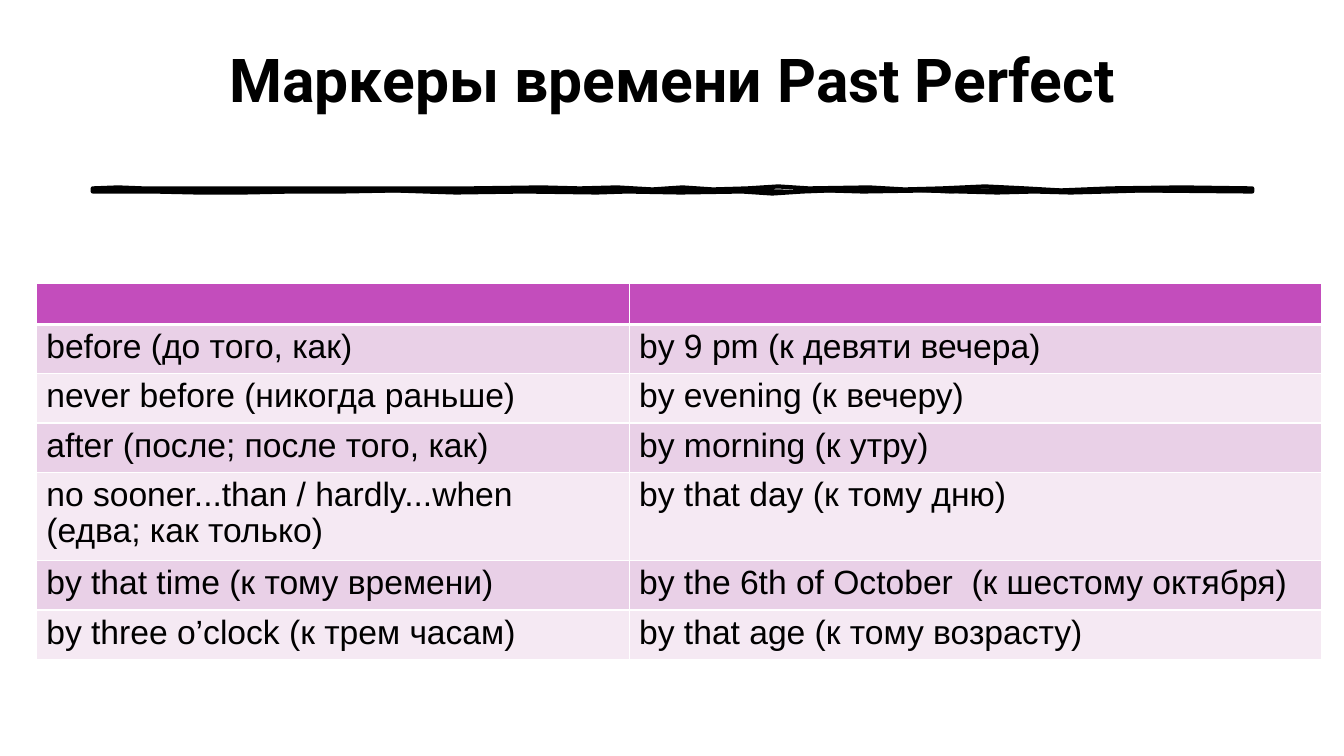
from lxml import etree
from pptx import Presentation
from pptx.dml.color import RGBColor
from pptx.enum import text as txt
from pptx.oxml import ns
from pptx.util import Inches, Pt

COLORS = {"ink": "000000", "header": "C34DBC", "odd": "E9D0E7",
          "even": "F5E9F3", "grid": "FFFFFF"}

MARKERS = [
    ("before (до того, как)", "by 9 pm (к девяти вечера)"),
    ("never before (никогда раньше)", "by evening (к вечеру)"),
    ("after (после; после того, как)", "by morning (к утру)"),
    ("no sooner...than / hardly...when\n(едва; как только)", "by that day (к тому дню)"),
    ("by that time (к тому времени)", "by the 6th of October  (к шестому октября)"),
    ("by three o’clock (к трем часам)", "by that age (к тому возрасту)"),
]

# Brush strands: (x, y) offsets from the left end of the rule
OUTLINE = [
    (0, 0), (0.25, -0.01), (0.5, 0), (1.2, 0), (2.04, 0), (2.8, 0), (3.73, 0),
    (4.45, -0.01), (4.83, 0), (5.2, -0.01), (5.55, 0.01), (5.85, -0.01),
    (6.15, 0.01), (6.49, 0), (6.8, -0.02), (7.1, 0), (7.7, -0.01), (8.05, 0.01),
    (8.42, 0), (8.85, -0.02), (9.25, 0), (9.6, 0.02), (10.09, 0), (10.8, -0.01),
    (11.5, 0), (11.5, 0.03), (10.4, 0.02), (10.06, 0.03), (9.7, 0.04),
    (9.34, 0.03), (8.97, 0.04), (8.25, 0.02), (7.64, 0.03), (7.3, 0.02),
    (7.04, 0.03), (6.74, 0.05), (6.44, 0.03), (5.83, 0.04), (5.3, 0.03),
    (5, 0.04), (4.28, 0.03), (3.6, 0.04), (3.3, 0.03), (3, 0.02), (2.47, 0.03),
    (1.98, 0.03), (1.5, 0.04), (1.03, 0.04), (0.6, 0.03), (0, 0.03),
]
BODY = [
    (0, 0), (0.3, 0.01), (0.6, 0), (1.92, 0), (4.57, 0), (6.47, 0), (7.18, 0.02),
    (8.13, 0), (9.34, 0), (10.17, 0.01), (10.6, -0.02), (11.5, 0),
    (11.5, 0.03), (10.5, 0.04), (9.8, 0.03), (9.1, 0.05), (8.85, 0.03),
    (8.5, 0.05), (8.13, 0.03), (7.3, 0.04), (5.8, 0.03), (5.4, 0.04),
    (4.14, 0.03), (2.81, 0.04), (1.12, 0.03), (0.4, 0.04), (0, 0.03),
]


def rgb(name):
    return RGBColor.from_string(COLORS[name])


def apply(target, values):
    for name, value in values.items():
        setattr(target, name, value)


def write(paragraph, line, size, font, bold, align, spacing):
    apply(paragraph, {"alignment": align, "line_spacing": spacing})
    run = paragraph.add_run()
    run.text = line
    apply(run.font, {"size": Pt(size), "name": font, "bold": bold})
    run.font.color.rgb = rgb("ink")


def add_title(slide, left, top, width, height):
    title = slide.shapes.add_textbox(*map(Inches, (left, top, width, height)))
    frame = title.text_frame
    apply(frame, {"word_wrap": True, "vertical_anchor": txt.MSO_ANCHOR.TOP,
                  "margin_top": Inches(0.1)})
    write(frame.paragraphs[0], "Маркеры времени Past Perfect", 43.2, "Roboto",
          True, txt.PP_ALIGN.CENTER, 0.9)


def add_brush_rule(slide, left, top):
    for strand, filled in ((OUTLINE, False), (BODY, True)):
        points = [(Inches(left + x), Inches(top + y)) for x, y in strand]
        builder = slide.shapes.build_freeform(*points[0])
        builder.add_line_segments(points[1:], close=True)
        stroke = builder.convert_to_shape()
        stroke.shadow.inherit = False
        if filled:
            stroke.fill.solid()
            stroke.fill.fore_color.rgb = rgb("ink")
            stroke.line.fill.background()
        else:
            stroke.fill.background()
            stroke.line.color.rgb = rgb("ink")
            stroke.line.width = Pt(3)


def set_borders(cell, widths):
    """Insert the cell's borders ahead of its fill, in schema order."""
    properties = cell._tc.get_or_add_tcPr()
    for index, (side, width) in enumerate(widths.items()):
        border = etree.Element(ns.qn(f"a:ln{side}"), w=str(Pt(width)))
        fill = etree.SubElement(border, ns.qn("a:solidFill"))
        etree.SubElement(fill, ns.qn("a:srgbClr"), val=COLORS["grid"])
        properties.insert(index, border)


def add_marker_table(slide, left, top, column_widths, row_height):
    rows = [("", "")] + MARKERS
    table = slide.shapes.add_table(
        len(rows), len(column_widths), Inches(left), Inches(top),
        Inches(sum(column_widths)), Inches(row_height * len(rows))).table
    for column, width in zip(table.columns, column_widths):
        column.width = Inches(width)
    for r, entries in enumerate(rows):
        table.rows[r].height = Inches(row_height)
        shade = "header" if r == 0 else "odd" if r % 2 else "even"
        for c, entry in enumerate(entries):
            cell = table.cell(r, c)
            cell.fill.solid()
            cell.fill.fore_color.rgb = rgb(shade)
            set_borders(cell, {"L": 1, "R": 1, "T": 3 if r == 1 else 1,
                               "B": 3 if r == 0 else 1})
            frame = cell.text_frame
            for i, line in enumerate(entry.splitlines()):
                paragraph = frame.add_paragraph() if i else frame.paragraphs[0]
                write(paragraph, line, 24, "Arial", False, txt.PP_ALIGN.LEFT, 0.97)


def main():
    prs = Presentation()
    apply(prs, {"slide_width": Inches(13.33), "slide_height": Inches(7.5)})
    slide = prs.slides.add_slide(prs.slide_layouts[6])
    add_brush_rule(slide, 0.92, 1.87)
    add_title(slide, 0.92, 0.4, 11.5, 1.45)
    add_marker_table(slide, 0.36, 2.81, (5.88, 6.87), 0.41)
    prs.save("out.pptx")


if __name__ == "__main__":
    main()
